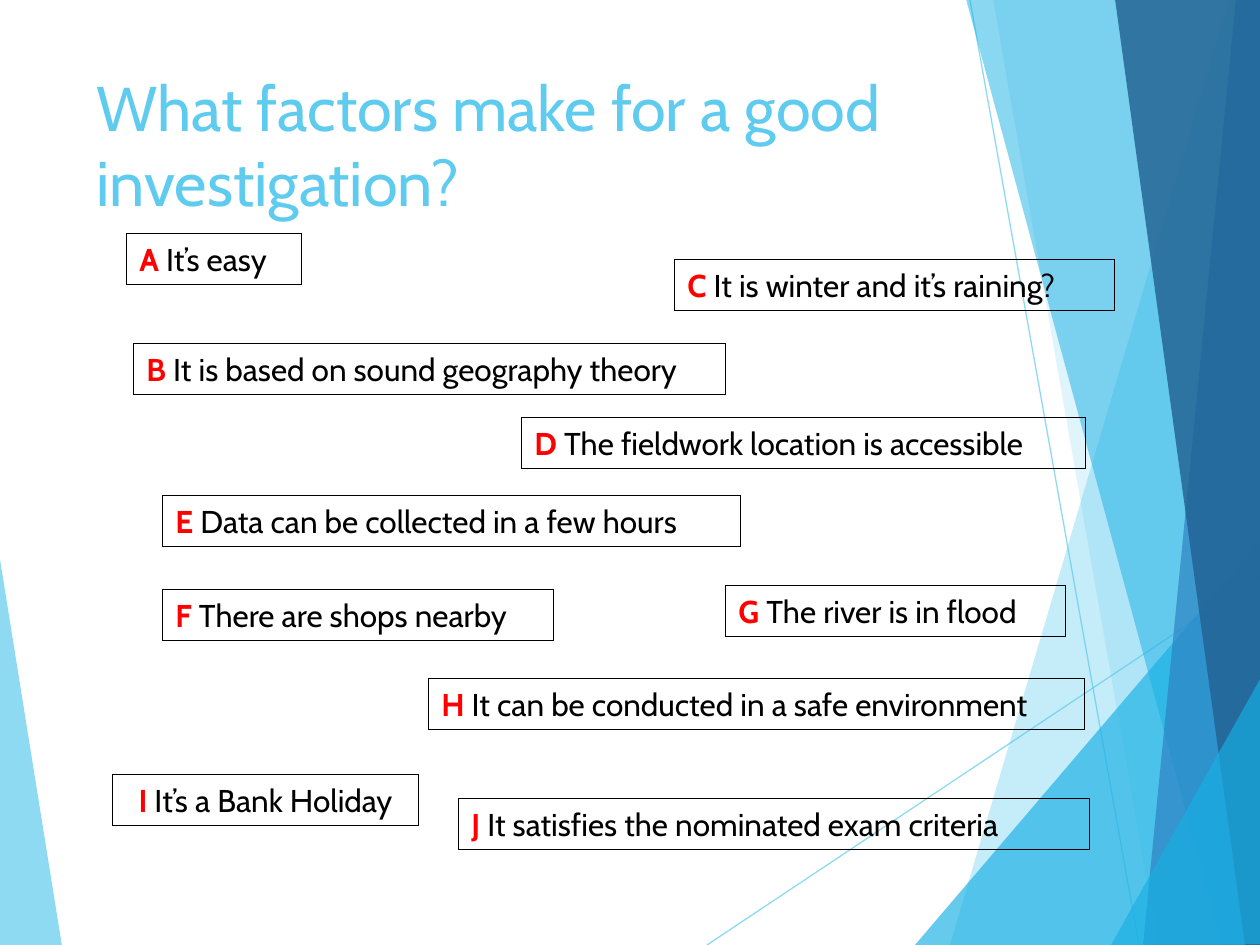
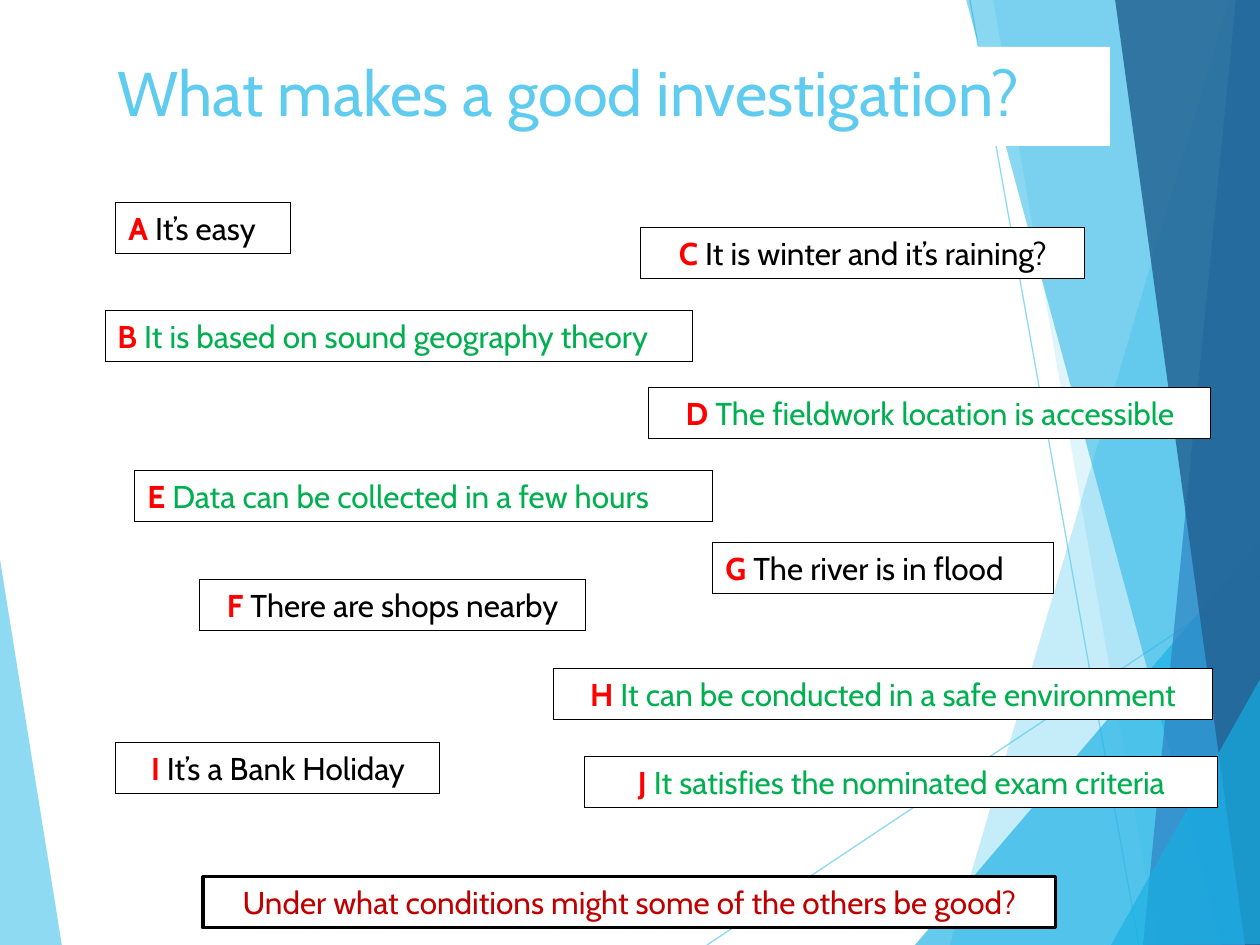
"""Build two slides that sort the factors of a good investigation."""

from lxml import etree
from pptx import Presentation
from pptx.dml.color import RGBColor
from pptx.enum.shapes import MSO_CONNECTOR
from pptx.enum.text import MSO_ANCHOR, MSO_AUTO_SIZE, PP_ALIGN
from pptx.oxml.ns import qn
from pptx.util import Pt

STRAIGHT = MSO_CONNECTOR.STRAIGHT
TOP = MSO_ANCHOR.TOP
FIXED, GROW = MSO_AUTO_SIZE.NONE, MSO_AUTO_SIZE.SHAPE_TO_FIT_TEXT
LEFT, CENTER = PP_ALIGN.LEFT, PP_ALIGN.CENTER

PX = 914400 / 126
WIDTH, HEIGHT, BOX_HEIGHT = 1260, 945, 51
FONT = "Cabin"
SKY, CYAN, BLUE, NAVY = "5FCBEF", "17B0E4", "2E83C3", "226292"
BLACK, WHITE, RED, GREEN, DARK_RED = "000000", "FFFFFF", "FF0000", "00B050", "C00000"

BANDS = [
    (SKY, 70, [(-1, 553), (62, 946), (-1, 945)]),
    (SKY, 36, [(1229, 0), (950, 945), (1263, 946), (1262, 1)]),
    (SKY, 20, [(993, -1), (1158, 945), (1261, 945), (1261, -1)]),
    (CYAN, 66, [(915, 945), (1260, 541), (1261, 945)]),
    (CYAN, 50, [(966, -1), (1222, 945), (1261, 944), (1261, -1)]),
    (BLUE, 70, [(1236, -1), (1143, 945), (1261, 945), (1260, -1)]),
    (NAVY, 82, [(1115, -1), (1245, 945), (1262, 945), (1260, -1)]),
    (CYAN, 66, [(1111, 945), (1263, 674), (1263, 944)]),
]
RAYS = [(707, 945, 1261, 576), (970, 0, 1139, 945)]

FACTORS = {
    "A": "It’s easy",
    "B": "It is based on sound geography theory",
    "C": "It is winter and it’s raining?",
    "D": "The fieldwork location is accessible",
    "E": "Data can be collected in a few hours",
    "F": "There are shops nearby",
    "G": "The river is in flood",
    "H": "It can be conducted in a safe environment",
    "I": "It’s a Bank Holiday",
    "J": "It satisfies the nominated exam criteria",
}
QUESTION = "Under what conditions might some of the others be good?"

PAGES = [
    {
        "title": "What factors make for a good investigation?",
        "title_at": (84, 62, 874, 181),
        "fill": None, "centred": "I", "good": "",
        "places": [(127, 234, 175), (134, 344, 592), (675, 260, 440), (522, 418, 564),
                   (163, 496, 578), (163, 590, 391), (726, 586, 340), (429, 679, 656),
                   (112, 775, 307), (459, 799, 631)],
    },
    {
        "title": "What makes a good investigation?",
        "title_at": (105, 47, 1005, 99),
        "fill": WHITE, "centred": "CDFHIJ", "good": "BDEHJ",
        "places": [(116, 203, 175), (105, 311, 588), (641, 228, 444), (649, 388, 562),
                   (135, 471, 578), (199, 580, 387), (713, 543, 341), (553, 669, 660),
                   (116, 743, 324), (585, 757, 633)],
        "question_at": (203, 877, 853),
    },
]


def paint(fill, color):
    fill.solid()
    fill.fore_color.rgb = RGBColor.from_string(color)


def write(para, text, color=BLACK, size=18, bold=False, align=LEFT):
    para.alignment = align
    span = para.add_run()
    span.text = text
    span.font.name, span.font.size, span.font.bold = FONT, Pt(size), bold
    paint(span.font.fill, color)


deck = Presentation()
deck.slide_width, deck.slide_height = round(WIDTH * PX), round(HEIGHT * PX)
layout = deck.slide_layouts[5]
pages = [deck.slides.add_slide(layout) for _ in PAGES]

backdrop = []
for ray in RAYS:
    line = pages[0].shapes.add_connector(STRAIGHT, *[round(n * PX) for n in ray])
    paint(line.line.fill, SKY)
    line.line.width = Pt(0.75)
    etree.SubElement(line.element.spPr, qn("a:effectLst"))
    backdrop.append((line, 70))
for color, opacity, points in BANDS:
    builder = pages[0].shapes.build_freeform(*points[0], scale=PX)
    builder.add_line_segments(points[1:], close=True)
    band = builder.convert_to_shape()
    paint(band.fill, color)
    band.line.fill.background()
    band.shadow.inherit = False
    backdrop.append((band, opacity))

for number, (shape, opacity) in enumerate(backdrop, start=101):
    tint = next(shape.element.iter(qn("a:srgbClr")))
    etree.SubElement(tint, qn("a:alpha"), val=str(opacity * 1000))
    next(shape.element.iter(qn("p:cNvPr"))).set("id", str(number))
    layout.shapes.element.append(shape.element)

for page, content in zip(pages, PAGES):
    title = page.shapes.title
    title.left, title.top, title.width, title.height = [
        round(n * PX) for n in content["title_at"]]
    title.text_frame.vertical_anchor = TOP
    title.text_frame.auto_size = FIXED
    title.text_frame.word_wrap = True
    write(title.text_frame.paragraphs[0], content["title"], color=SKY, size=36)
    if content["fill"]:
        paint(title.fill, content["fill"])

    cards = list(zip(FACTORS, content["places"]))
    if "question_at" in content:
        cards.append((None, content["question_at"]))
    for letter, place in cards:
        box = page.shapes.add_textbox(*[round(n * PX) for n in (*place, BOX_HEIGHT)])
        box.text_frame.word_wrap = True
        box.text_frame.auto_size = GROW
        paint(box.line.fill, BLACK)
        if content["fill"]:
            paint(box.fill, content["fill"])
        para = box.text_frame.paragraphs[0]
        if letter:
            align = CENTER if letter in content["centred"] else LEFT
            color = GREEN if letter in content["good"] else BLACK
            write(para, letter, color=RED, bold=True, align=align)
            write(para, " " + FACTORS[letter], color=color, align=align)
        else:
            box.line.width = Pt(1.75)
            write(para, QUESTION, color=DARK_RED, align=CENTER)

deck.save("out.pptx")
